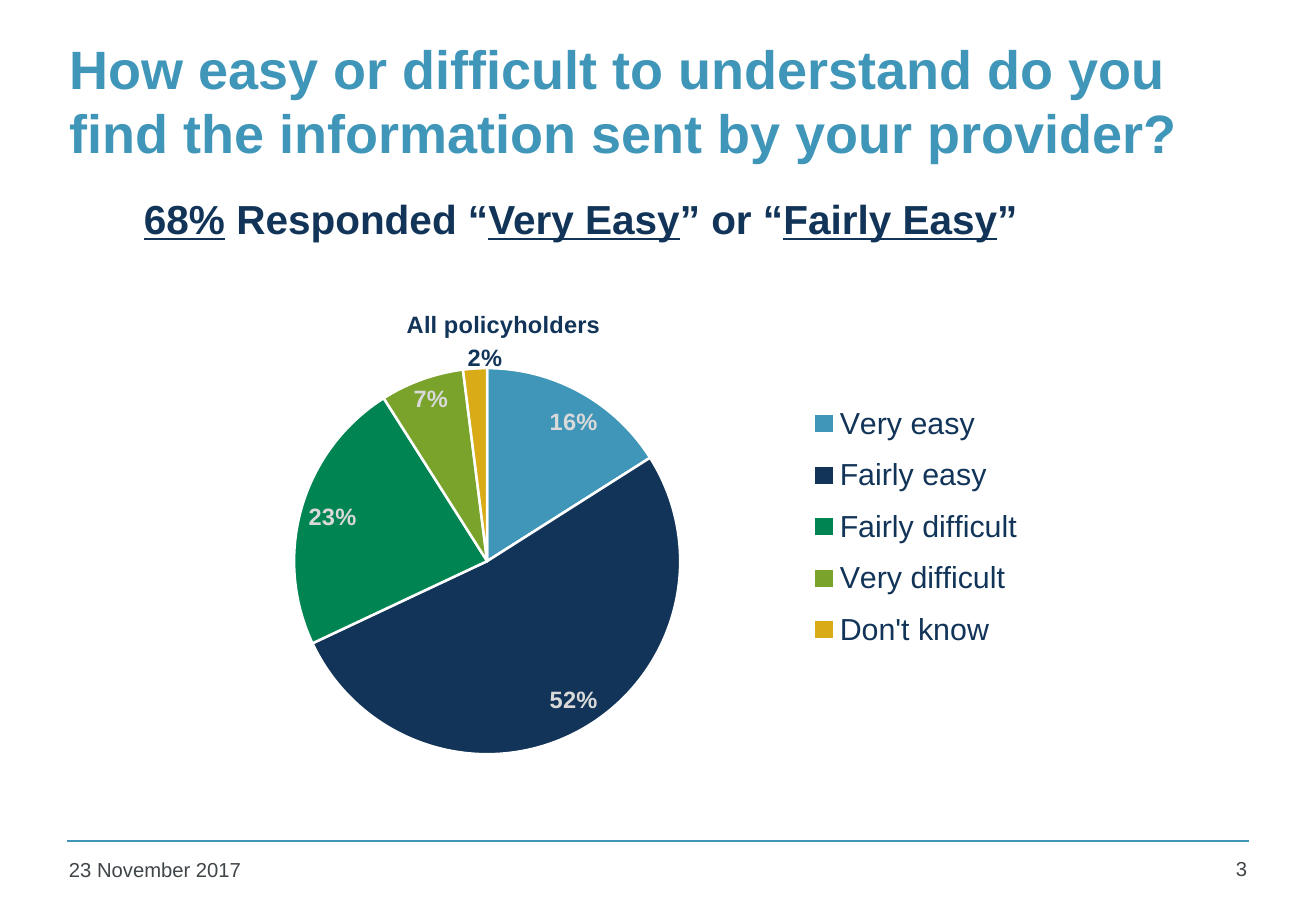
from lxml.etree import SubElement
from pptx import Presentation
from pptx.chart.data import CategoryChartData
from pptx.dml.color import RGBColor
from pptx.enum.chart import XL_CHART_TYPE as ChartType
from pptx.enum.chart import XL_LABEL_POSITION as LabelPosition
from pptx.enum.chart import XL_LEGEND_POSITION as LegendPosition
from pptx.enum.shapes import MSO_CONNECTOR as Connector
from pptx.enum.text import MSO_ANCHOR as Anchor
from pptx.enum.text import PP_ALIGN as Align
from pptx.oxml.ns import qn
from pptx.util import Pt

PX = 914400 / 121.5
BLUE = RGBColor(0x40, 0x96, 0xB8)
NAVY = RGBColor(0x11, 0x34, 0x58)
GREEN = RGBColor(0x00, 0x84, 0x52)
OLIVE = RGBColor(0x79, 0xA3, 0x2A)
GOLD = RGBColor(0xD9, 0xAB, 0x16)
GREY = RGBColor(0x3F, 0x45, 0x48)
LIGHT = RGBColor(0xD9, 0xD9, 0xD9)
WHITE = RGBColor(0xFF, 0xFF, 0xFF)


def set_font(font, size, color, bold=False):
    values = {"name": "Arial", "size": Pt(size), "bold": bold}
    for name, value in values.items():
        setattr(font, name, value)
    font.color.rgb = color


def set_layout(parent, index, values):
    for old in parent.findall(qn("c:layout")):
        parent.remove(old)
    layout = parent.makeelement(qn("c:layout"))
    parent.insert(index, layout)
    manual = SubElement(layout, qn("c:manualLayout"))
    for name, value in values.items():
        SubElement(manual, qn(f"c:{name}")).set("val", str(value))


presentation = Presentation()
presentation.slide_width = round(1316 * PX)
presentation.slide_height = round(911 * PX)
slide = presentation.slides.add_slide(presentation.slide_layouts[6])

rule = slide.shapes.add_connector(
    Connector.STRAIGHT, *[round(v * PX) for v in (67, 841, 1249, 841)])
rule.line.color.rgb = BLUE
rule.line.width = Pt(1)
SubElement(rule._element.spPr, qn("a:effectLst"))

title_runs = [("How easy or difficult to understand do you "
               "find the information sent by your provider?", False)]
summary_runs = [("68%", True), (" Responded “", False), ("Very Easy", True),
                ("” or “", False), ("Fairly Easy", True), ("”", False)]
texts = [
    ((58, 35, 1193, 130), title_runs, 32, BLUE, True, Align.LEFT, Anchor.MIDDLE),
    ((132, 188, 966, 86), summary_runs, 24, NAVY, True, Align.LEFT, Anchor.TOP),
    ((57, 851, 290, 44), [("23 November 2017", False)], 12, GREY, False,
     Align.LEFT, Anchor.TOP),
    ((1165, 850, 94, 45), [("3", False)], 12, GREY, False, Align.RIGHT, Anchor.TOP),
]
for box, runs, size, color, bold, align, anchor in texts:
    shape = slide.shapes.add_textbox(*[round(v * PX) for v in box])
    frame = shape.text_frame
    frame.word_wrap = True
    frame.vertical_anchor = anchor
    paragraph = frame.paragraphs[0]
    paragraph.alignment = align
    for text, underline in runs:
        run = paragraph.add_run()
        run.text = text
        set_font(run.font, size, color, bold)
        run.font.underline = underline

INSIDE, OUTSIDE = LabelPosition.INSIDE_END, LabelPosition.OUTSIDE_END
answers = [("Very easy", 16, BLUE, LIGHT, INSIDE, 0.02, 0.02),
           ("Fairly easy", 52, NAVY, LIGHT, INSIDE, 0.02, -0.02),
           ("Fairly difficult", 23, GREEN, LIGHT, INSIDE, 0, -0.01),
           ("Very difficult", 7, OLIVE, LIGHT, INSIDE, -0.01, 0),
           ("Don't know", 2, GOLD, NAVY, OUTSIDE, 0.01, 0.02)]
chart_data = CategoryChartData()
chart_data.categories = [answer[0] for answer in answers]
chart_data.add_series("Series 1", [answer[1] for answer in answers])
chart = slide.shapes.add_chart(
    ChartType.PIE, *[round(v * PX) for v in (0, 273, 1059, 529)], chart_data).chart
set_font(chart.font, 10, GREY)

chart.has_title = True
title_paragraph = chart.chart_title.text_frame.paragraphs[0]
title_run = title_paragraph.add_run()
title_run.text = "All policyholders"
set_font(title_run.font, 14, NAVY, True)

chart.has_legend = True
chart.legend.position = LegendPosition.RIGHT
chart.legend.include_in_layout = False
set_font(chart.legend.font, 18, NAVY)

plot = chart.plots[0]
plot.vary_by_categories = True
series = plot.series[0]
labels = series.data_labels
label_values = {"show_percentage": True, "show_value": False,
                "number_format": "0%", "number_format_is_linked": False,
                "position": INSIDE}
for name, value in label_values.items():
    setattr(labels, name, value)
set_font(labels.font, 14, LIGHT, True)

for index, (name, value, color, label_color, position, dx, dy) in enumerate(answers):
    point = series.points[index]
    point.format.fill.solid()
    point.format.fill.fore_color.rgb = color
    point.format.line.color.rgb = WHITE
    point.format.line.width = Pt(1.5)
    set_font(point.data_label.font, 14, label_color, True)
    point.data_label.position = position
    label_element = labels._element.findall(qn("c:dLbl"))[index]
    label_element.find(qn("c:showVal")).set("val", "0")
    label_element.find(qn("c:showPercent")).set("val", "1")
    set_layout(label_element, 1, {"x": dx, "y": dy})

chart_element = chart._chartSpace.find(qn("c:chart"))
set_layout(chart_element.find(qn("c:title")), 1,
           {"xMode": "edge", "yMode": "edge", "x": 0.38, "y": 0.06})
set_layout(chart_element.find(qn("c:plotArea")), 0,
           {"layoutTarget": "inner", "xMode": "edge", "yMode": "edge",
            "x": 0.04, "y": 0.18, "w": 0.84, "h": 0.73})
set_layout(chart_element.find(qn("c:legend")), 1,
           {"xMode": "edge", "yMode": "edge",
            "x": 0.76, "y": 0.22, "w": 0.21, "h": 0.52})

presentation.save("out.pptx")
